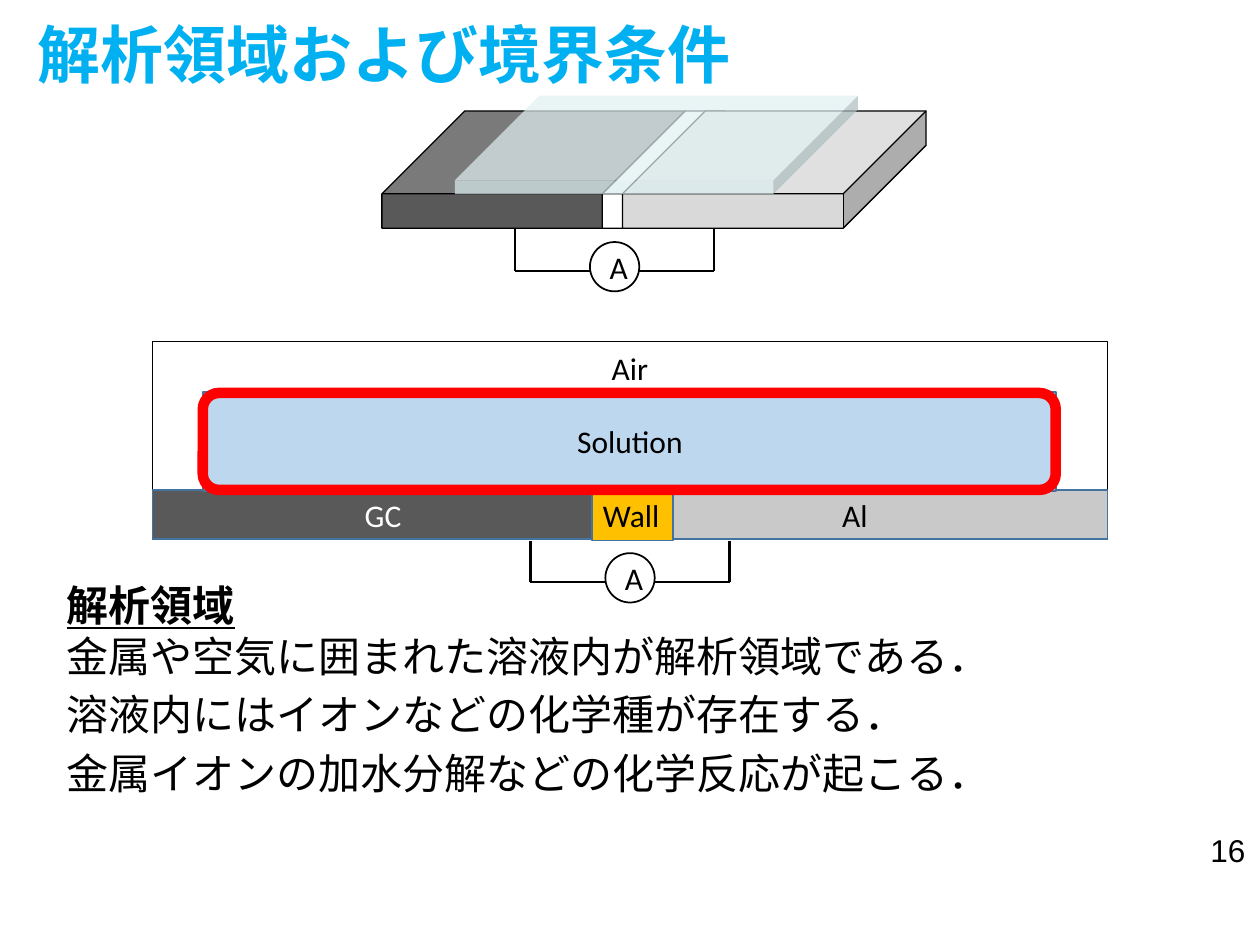
from dataclasses import dataclass

import pptx
import pptx.dml.color
import pptx.enum.shapes
import pptx.enum.text
import pptx.oxml.ns
import pptx.util
from lxml import etree

Pt = pptx.util.Pt
SHAPE = pptx.enum.shapes.MSO_SHAPE
ALIGN = pptx.enum.text.PP_ALIGN
ANCHOR = pptx.enum.text.MSO_ANCHOR
AUTOSIZE = pptx.enum.text.MSO_AUTO_SIZE


@dataclass(frozen=True)
class Theme:
    black: str = "000000"
    white: str = "FFFFFF"
    title: str = "00B0F0"
    outline: str = "43739E"
    carbon: str = "595959"
    aluminium: str = "C9C9C9"
    aluminium_block: str = "D9D9D9"
    solution: str = "BDD7EE"
    wall: str = "FFC000"
    glass: str = "DAEDEF"
    highlight: str = "FF0000"
    text_font: str = "Arial"
    label_font: str = "Calibri"
    title_size: int = 36
    body_size: int = 24
    label_size: int = 18


THEME = Theme()


def rgb(color):
    return pptx.dml.color.RGBColor.from_string(color)


def add_span(para, text, size, color=THEME.black, font=THEME.text_font,
             bold=False, underline=False):
    span = para.add_run()
    span.text = text
    span.font.name = font
    span.font.size = Pt(size)
    span.font.color.rgb = rgb(color)
    span.font.bold = bold
    span.font.underline = underline


def add_shape(shapes, kind, left, top, width, height, fill=None, line=None, weight=1):
    shape = shapes.add_shape(kind, Pt(left), Pt(top), Pt(width), Pt(height))
    shape.shadow.inherit = False
    if fill:
        shape.fill.solid()
        shape.fill.fore_color.rgb = rgb(fill)
    else:
        shape.fill.background()
    if line:
        shape.line.color.rgb = rgb(line)
        shape.line.width = Pt(weight)
    else:
        shape.line.fill.background()
    return shape


def add_cube(shapes, left, top, width, height, fill, depth=0.707, line=THEME.black):
    cube = add_shape(shapes, SHAPE.CUBE, left, top, width, height, fill, line, 0.75)
    cube.adjustments[0] = depth
    return cube


def add_label(shapes, text, center, top, width, color=THEME.black, font=THEME.label_font):
    box = shapes.add_textbox(Pt(center - width / 2), Pt(top), Pt(width), Pt(28.8))
    box.text_frame.word_wrap = False
    box.text_frame.auto_size = AUTOSIZE.SHAPE_TO_FIT_TEXT
    para = box.text_frame.paragraphs[0]
    para.alignment = ALIGN.CENTER
    add_span(para, text, THEME.label_size, color, font)


def add_wire(shapes, x1, y1, x2, y2):
    wire = shapes.add_connector(pptx.enum.shapes.MSO_CONNECTOR.STRAIGHT,
                                Pt(x1), Pt(y1), Pt(x2), Pt(y2))
    wire.line.color.rgb = rgb(THEME.black)
    wire.line.width = Pt(1.5)
    etree.SubElement(wire.element.spPr, pptx.oxml.ns.qn("a:effectLst"))


def add_ammeter(shapes, center, top, bottom):
    """Ammeter circle with a wire on each side leading up to an electrode."""
    radius, reach = 14.1, 56.9
    circle = add_shape(shapes, SHAPE.OVAL, center - radius, bottom - 16.5,
                       2 * radius, 2 * radius, THEME.white, THEME.black)
    para = circle.text_frame.paragraphs[0]
    para.alignment = ALIGN.CENTER
    add_span(para, "A", THEME.label_size, font=THEME.label_font)
    for side in (-1, 1):
        outer = center + side * reach
        add_wire(shapes, outer, top, outer, bottom)
        add_wire(shapes, center + side * radius, bottom, outer, bottom)


def place(holder, left, top, width, height, anchor):
    holder.left, holder.top = Pt(left), Pt(top)
    holder.width, holder.height = Pt(width), Pt(height)
    holder.text_frame.auto_size = AUTOSIZE.NONE
    holder.text_frame.vertical_anchor = anchor


def fill_title(holder):
    place(holder, 14.4, 6.5, 692, 48.2, ANCHOR.MIDDLE)
    para = holder.text_frame.paragraphs[0]
    para.alignment = ALIGN.LEFT
    add_span(para, "解析領域および境界条件", THEME.title_size, THEME.title, bold=True)


def fill_body(holder):
    place(holder, 31, 327.6, 648, 135.4, ANCHOR.TOP)
    lines = ["金属や空気に囲まれた溶液内が解析領域である．",
             "溶液内にはイオンなどの化学種が存在する．",
             "金属イオンの加水分解などの化学反応が起こる．"]
    frame = holder.text_frame
    for index, line in enumerate(lines):
        para = frame.add_paragraph() if index else frame.paragraphs[0]
        properties = para._p.get_or_add_pPr()
        properties.set("marL", "0")
        properties.set("indent", "0")
        para.space_before = Pt(4.8 if index else 0)
        etree.SubElement(properties, pptx.oxml.ns.qn("a:buNone"))
        if index == 0:
            add_span(para, "解析領域", THEME.body_size, bold=True, underline=True)
            para.add_line_break()
        add_span(para, line, THEME.body_size)


def draw_cell_view(shapes):
    """Oblique view: carbon, gap and aluminium blocks under a glass cover."""
    add_ammeter(shapes, 351.2, 120.2, 154.8)
    blocks = [(218.2, 173.5, THEME.carbon), (344.2, 69.8, THEME.white),
              (355.7, 173.5, THEME.aluminium_block)]
    for left, width, fill in blocks:
        add_cube(shapes, left, 63.4, width, 67, fill)
    glass = add_cube(shapes, 259.9, 54.7, 230.4, 56.2, THEME.glass, 0.86, None)
    color = glass.fill._xPr.find(".//" + pptx.oxml.ns.qn("a:srgbClr"))
    etree.SubElement(color, pptx.oxml.ns.qn("a:alpha"), val="70000")


def draw_cross_section(shapes):
    """Section: air and solution above the two electrodes and the wall."""
    left, half, electrode_top, electrode_height = 87.1, 272.9, 280.1, 28.1
    center = left + half
    section = shapes.add_group_shape().shapes
    add_shape(section, SHAPE.RECTANGLE, left, 195.1, 2 * half, 113.1,
              THEME.white, THEME.black)
    for start, fill in ((center, THEME.aluminium), (left, THEME.carbon)):
        add_shape(section, SHAPE.RECTANGLE, start, electrode_top, half,
                  electrode_height, fill, THEME.outline)
    add_shape(section, SHAPE.RECTANGLE, 115.9, 223.9, 487.4, 56.9,
              THEME.solution, THEME.outline)
    add_label(section, "Air", center, 195.8, 44.6)
    add_label(section, "Solution", center, 237.6, 95.8)
    add_label(section, "GC", 218.9, electrode_top, 36, THEME.white)
    add_label(section, "Al", 488.5, electrode_top, 36.7)

    # Wall and highlighted analysis region
    add_shape(shapes, SHAPE.RECTANGLE, 338.4, 280.8, 46.1, electrode_height,
              THEME.wall, THEME.outline)
    add_label(shapes, "Wall", 360.7, electrode_top, 49)
    add_shape(shapes, SHAPE.ROUNDED_RECTANGLE, 115.9, 224.6, 487.4, 55.4,
              line=THEME.highlight, weight=6)
    add_ammeter(shapes, 360, 308.9, 332.6)


def main():
    deck = pptx.Presentation()
    deck.slide_width, deck.slide_height = Pt(720), Pt(540)
    page = deck.slides.add_slide(deck.slide_layouts[1])
    fill_title(page.shapes.title)
    fill_body(page.placeholders[1])
    draw_cell_view(page.shapes)
    draw_cross_section(page.shapes)
    # Page number
    add_label(page.shapes, "16", 701.6, 471.6, 36.7, font=THEME.text_font)
    deck.save("out.pptx")


if __name__ == "__main__":
    main()
